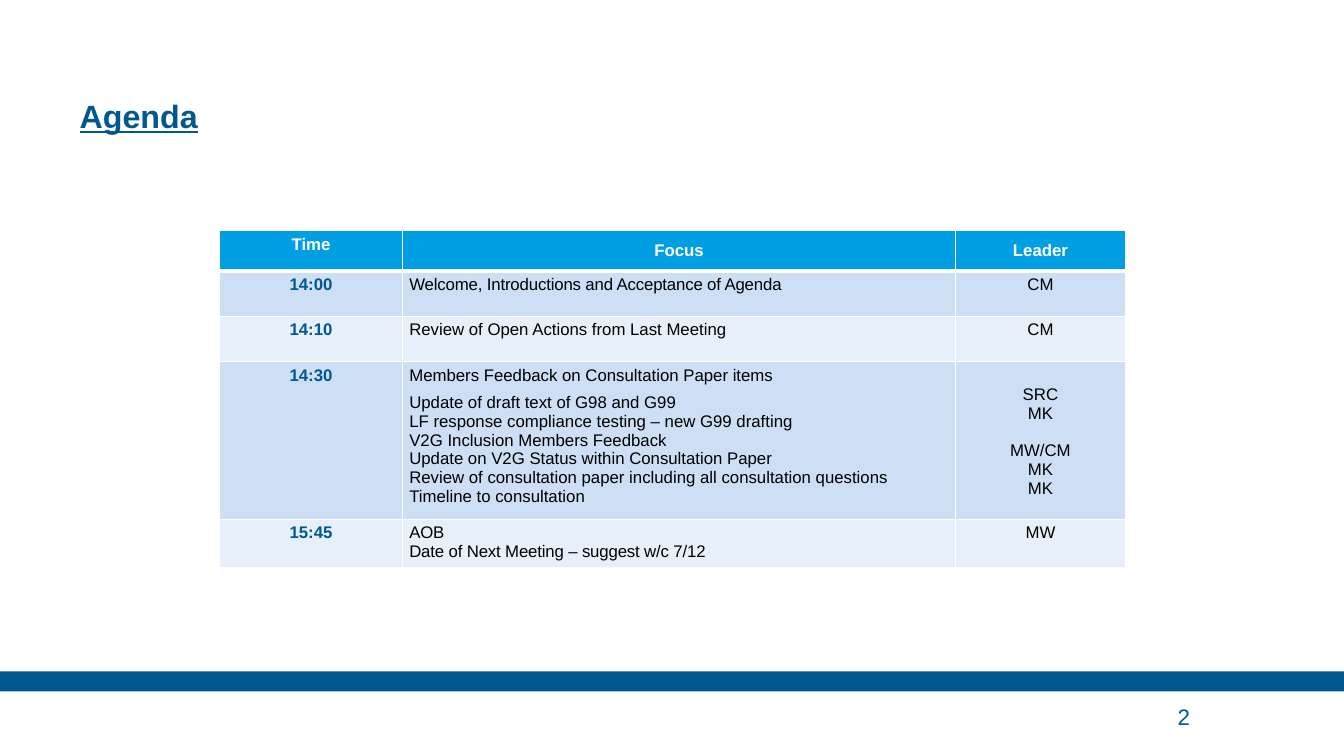
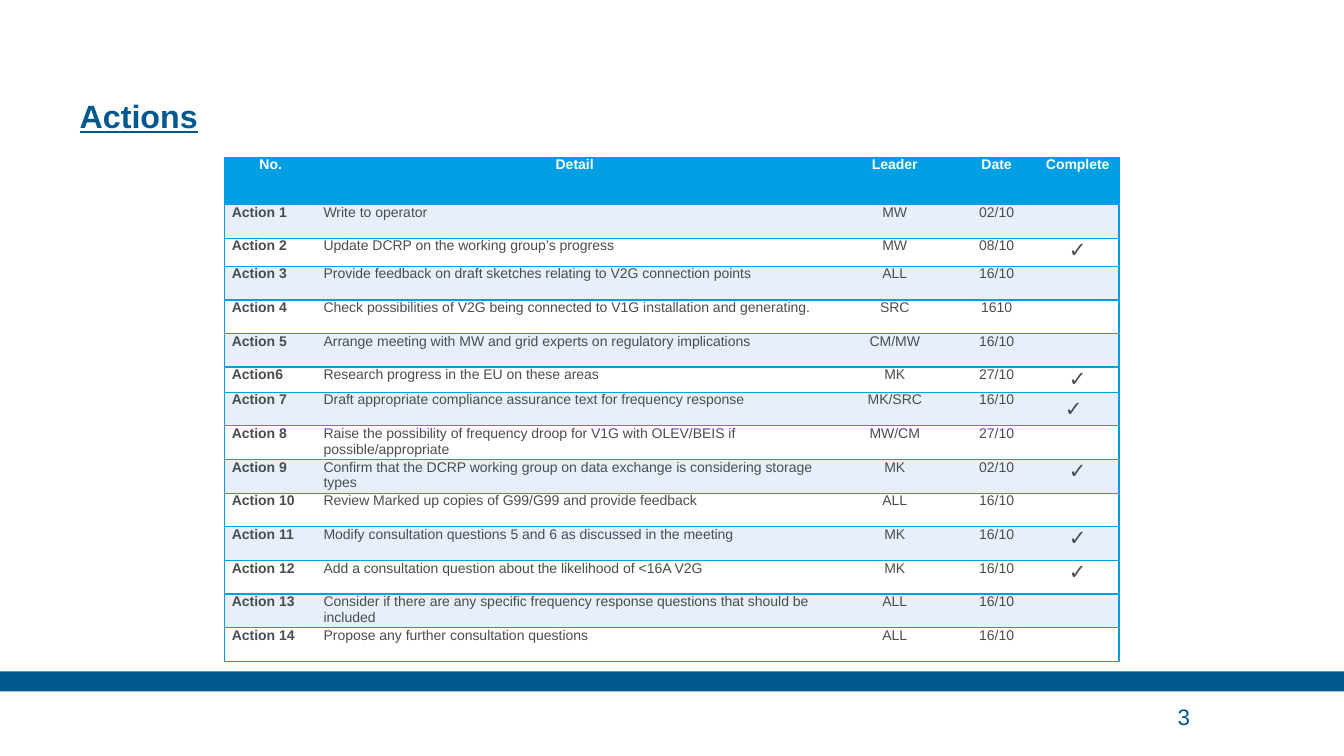
from dataclasses import dataclass

from lxml import etree
from pptx import Presentation
from pptx.dml.color import RGBColor
from pptx.enum.shapes import MSO_SHAPE
from pptx.enum.text import MSO_ANCHOR, PP_ALIGN
from pptx.oxml.ns import qn
from pptx.util import Inches, Pt

RECT = MSO_SHAPE.RECTANGLE
TOP, MIDDLE, BOTTOM = MSO_ANCHOR.TOP, MSO_ANCHOR.MIDDLE, MSO_ANCHOR.BOTTOM
LEFT, CENTER = PP_ALIGN.LEFT, PP_ALIGN.CENTER


@dataclass(frozen=True)
class Theme:
    font: str = "Arial"
    navy: str = "00598E"
    sky: str = "009FE3"
    mid_blue: str = "CCDFF4"
    pale_blue: str = "E7F0FA"
    white: str = "FFFFFF"
    black: str = "000000"
    grey: str = "484D51"
    title: int = 23
    number: int = 16
    agenda: int = 12
    actions: int = 10
    tick: int = 15


T = Theme()

# Agenda: time, focus lines, leader lines, least row height
AGENDA = [
    ("14:00", ["Welcome, Introductions and Acceptance of Agenda"], ["CM"], 0.45),
    ("14:10", ["Review of Open Actions from Last Meeting"], ["CM"], 0.45),
    ("14:30", ["Members Feedback on Consultation Paper items",
               "Update of draft text of G98 and G99",
               "LF response compliance testing – new G99 drafting",
               "V2G Inclusion Members Feedback",
               "Update on V2G Status within Consultation Paper",
               "Review of consultation paper including all consultation questions",
               "Timeline to consultation"],
     ["SRC", "MK", "MW/CM", "MK", "MK"], 0.41),
    ("15:45", ["AOB", "Date of Next Meeting – suggest w/c 7/12"], ["MW"], 0.41),
]
FEEDBACK_ROW = 3
TIGHT_ROWS = (1, 4)

# Actions: number, detail, leader, date, complete
ACTIONS = [
    ("Action 1", "Write to operator", "MW", "02/10", ""),
    ("Action 2", "Update DCRP on the working group’s progress", "MW", "08/10", "✓"),
    ("Action 3", "Provide feedback on draft sketches relating to V2G connection points",
     "ALL", "16/10", ""),
    ("Action 4", "Check possibilities of V2G being connected to V1G installation and generating.",
     "SRC", "1610", ""),
    ("Action 5", "Arrange meeting with MW and grid experts on regulatory implications",
     "CM/MW", "16/10", ""),
    ("Action6", "Research progress in the EU on these areas", "MK", "27/10", "✓"),
    ("Action 7", "Draft appropriate compliance assurance text for frequency response",
     "MK/SRC", "16/10", "✓"),
    ("Action 8", "Raise the possibility of frequency droop for V1G with OLEV/BEIS if "
     "possible/appropriate", "MW/CM", "27/10", ""),
    ("Action 9", "Confirm that the DCRP working group on data exchange is considering "
     "storage types", "MK", "02/10", "✓"),
    ("Action 10", "Review Marked up copies of G99/G99 and provide feedback", "ALL", "16/10", ""),
    ("Action 11", "Modify consultation questions 5 and 6 as discussed in the meeting",
     "MK", "16/10", "✓"),
    ("Action 12", "Add a consultation question about the likelihood of <16A V2G",
     "MK", "16/10", "✓"),
    ("Action 13", "Consider if there are any specific frequency response questions that "
     "should be included", "ALL", "16/10", ""),
    ("Action 14", "Propose any further consultation questions", "ALL", "16/10", ""),
]
LOW_ROWS = {2: 0.28, 6: 0.24}
LOW_TICK_ROW = 7


def rgb(color):
    return RGBColor.from_string(color)


def write(tf, lines, size, color, bold=False, underline=None, align=LEFT):
    """Put one paragraph per line into a text frame."""
    tf.text = "\n".join(lines)
    for p in tf.paragraphs:
        p.alignment = align
        for r in p.runs:
            r.font.name, r.font.size = T.font, Pt(size)
            r.font.bold, r.font.underline = bold, underline
            r.font.color.rgb = rgb(color)


def add_text(s, box, text, size, anchor, **style):
    tf = s.shapes.add_textbox(*map(Inches, box)).text_frame
    tf.word_wrap = True
    tf.vertical_anchor = anchor
    tf.margin_left = tf.margin_right = tf.margin_top = tf.margin_bottom = 0
    write(tf, [text], size, T.navy, **style)
    return tf


def add_slide(prs, title, number):
    """Slide with the shared title, bottom band and page number."""
    s = prs.slides.add_slide(prs.slide_layouts[6])
    band = s.shapes.add_shape(RECT, 0, Inches(6.66), prs.slide_width, Inches(0.2))
    band.shadow.inherit = False
    band.fill.solid()
    band.fill.fore_color.rgb = rgb(T.navy)
    band.line.fill.background()
    tf = add_text(s, (0.79, 0.32, 9.84, 1.02), title, T.title, BOTTOM,
                  bold=True, underline=True)
    tf.paragraphs[0].line_spacing = Pt(30)
    add_text(s, (11.68, 6.91, 1.23, 0.39), str(number), T.number, MIDDLE)
    return s


def add_table(s, left, top, cols, rows):
    frame = s.shapes.add_table(len(rows), len(cols), Inches(left), Inches(top),
                               Inches(sum(cols)), Inches(sum(rows)))
    table = frame.table
    table.first_row = table.horz_banding = False
    for column, width in zip(table.columns, cols):
        column.width = Inches(width)
    for row, height in zip(table.rows, rows):
        row.height = Inches(height)
    return table


def set_borders(cell, **sides):
    """Sides L, R, T, B as (color, points), or None for no line."""
    tcPr = cell._tc.get_or_add_tcPr()
    for i, side in enumerate("LRTB"):
        ln = etree.Element(qn("a:ln" + side))
        if sides[side]:
            color, points = sides[side]
            ln.set("w", str(Pt(points)))
            fill = etree.SubElement(ln, qn("a:solidFill"))
            etree.SubElement(fill, qn("a:srgbClr"), val=color)
        else:
            ln.set("w", "0")
            etree.SubElement(ln, qn("a:noFill"))
        tcPr.insert(i, ln)


def fill_cell(cell, lines, fill, pad, size, color, anchor=TOP, **style):
    cell.fill.solid()
    cell.fill.fore_color.rgb = rgb(fill)
    cell.margin_left = cell.margin_right = Inches(0.07)
    cell.margin_top = cell.margin_bottom = Inches(pad)
    cell.vertical_anchor = anchor
    write(cell.text_frame, lines, size, color, **style)


def build_agenda(prs):
    s = add_slide(prs, "Agenda", 2)
    table = add_table(s, 2.18, 2.29, [1.81, 5.49, 1.68], [0.4] + [row[3] for row in AGENDA])
    line = (T.white, 1)

    # Header
    for c, label in enumerate(["Time", "Focus", "Leader"]):
        cell = table.cell(0, c)
        fill_cell(cell, [label], T.sky, 0.04, T.agenda, T.white,
                  anchor=MIDDLE if c else TOP, bold=True, align=CENTER)
        set_borders(cell, L=line, R=line, T=line, B=(T.white, 3))

    # Items
    for i, (time, focus, leaders, _) in enumerate(AGENDA, 1):
        fill = T.mid_blue if i % 2 else T.pale_blue
        for c, lines in enumerate([[time], focus, leaders]):
            cell = table.cell(i, c)
            fill_cell(cell, lines, fill, 0.04, T.agenda, T.black if c else T.navy,
                      bold=c == 0, align=LEFT if c == 1 else CENTER)
            set_borders(cell, L=line, R=line, T=(T.white, 3 if i == 1 else 1), B=line)

    # Tighter letters, and leaders lined up with the feedback topics
    for i in TIGHT_ROWS:
        for p in table.cell(i, 1).text_frame.paragraphs:
            for r in p.runs:
                r._r.get_or_add_rPr().set("spc", "-10")
    table.cell(FEEDBACK_ROW, 1).text_frame.paragraphs[0].space_after = Pt(6)
    leaders = table.cell(FEEDBACK_ROW, 2)
    leaders.margin_top = Inches(0.23)
    leaders.text_frame.paragraphs[2].space_before = Pt(13.5)


def build_actions(prs):
    s = add_slide(prs, "Actions", 3)
    heights = [0.47] + [LOW_ROWS.get(i, 1 / 3) for i in range(1, len(ACTIONS) + 1)]
    table = add_table(s, 2.23, 1.56, [0.91, 5.12, 1.23, 0.79, 0.82], heights)
    line = (T.sky, 1)
    rows = [("No.", "Detail", "Leader", "Date", "Complete")] + ACTIONS
    last = len(rows[0]) - 1

    for i, row in enumerate(rows):
        for c, text in enumerate(row):
            cell = table.cell(i, c)
            if i == 0:
                fill_cell(cell, [text], T.sky, 0, T.actions, T.white, bold=True, align=CENTER)
            else:
                fill_cell(cell, [text], T.pale_blue if i % 2 else T.white, 0,
                          T.tick if c == last else T.actions, T.grey,
                          bold=c == 0, align=LEFT if c < 2 else CENTER)
            set_borders(cell, L=line if c == 0 else None, R=line if c == last else None,
                        T=line, B=line)

    # This tick sits lower and further left
    tick = table.cell(LOW_TICK_ROW, last)
    tick.margin_top, tick.margin_right = Inches(0.05), Inches(0.15)


def main():
    prs = Presentation()
    prs.slide_width, prs.slide_height = Inches(13.33), Inches(7.5)
    build_agenda(prs)
    build_actions(prs)
    prs.save("out.pptx")


if __name__ == "__main__":
    main()
